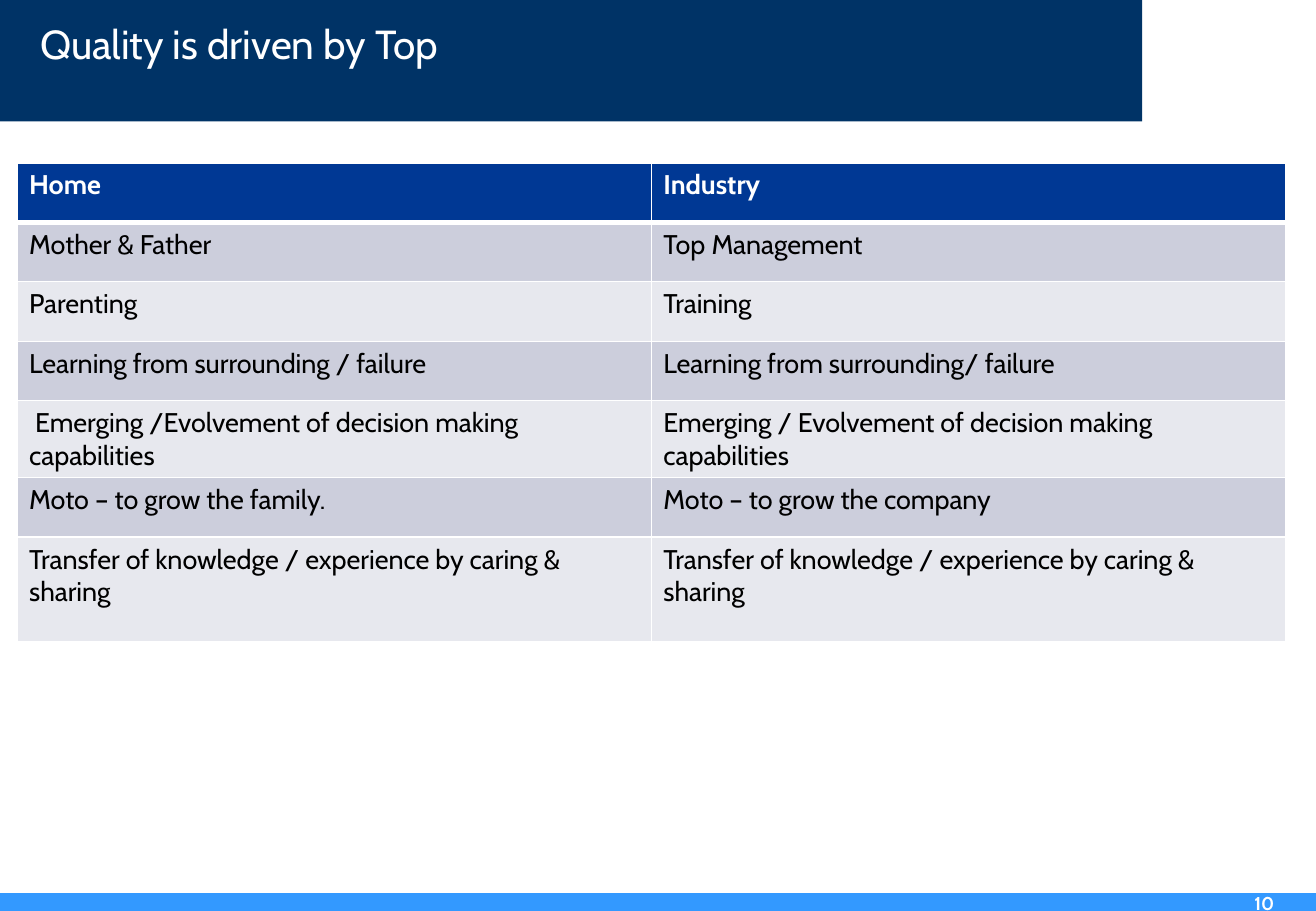
from lxml import etree
from pptx import Presentation
from pptx.dml.color import RGBColor
from pptx.enum.shapes import MSO_SHAPE
from pptx.enum.text import MSO_ANCHOR, PP_ALIGN
from pptx.oxml.ns import qn
from pptx.util import Inches, Pt

RECTANGLE = MSO_SHAPE.RECTANGLE
MIDDLE = MSO_ANCHOR.MIDDLE
LEFT, CENTER = PP_ALIGN.LEFT, PP_ALIGN.CENTER

FONT = "Cabin"
WHITE = RGBColor(0xFF, 0xFF, 0xFF)
BLACK = RGBColor(0x00, 0x00, 0x00)
NAVY = RGBColor(0x00, 0x33, 0x66)
SKY = RGBColor(0x33, 0x99, 0xFF)
HEADER_BLUE = RGBColor(0x00, 0x38, 0x94)
BAND_DARK = RGBColor(0xCC, 0xCE, 0xDC)
BAND_LIGHT = RGBColor(0xE7, 0xE8, 0xEE)

# The slide is a grid of square units, ten to the inch
UNIT = Inches(0.1)
COLUMNS, ROWS = 108.3, 75

ROW_HEIGHTS = [4.9, 4.9, 4.9, 4.9, 5.6, 4.9, 8.6]
COMPARISON = [
    ("Home", "Industry"),
    ("Mother & Father", "Top Management"),
    ("Parenting", "Training"),
    ("Learning from surrounding / failure", "Learning from surrounding/ failure"),
    (" Emerging /Evolvement of decision making capabilities",
     "Emerging / Evolvement of decision making capabilities"),
    ("Moto – to grow the family.", "Moto – to grow the company"),
    ("Transfer of knowledge / experience by caring & sharing",
     "Transfer of knowledge / experience by caring & sharing"),
]


def units(*counts):
    return [int(count * UNIT) for count in counts]


def style_paragraph(para, size, color, bold=False, align=LEFT):
    para.alignment = align
    para.font.name = FONT
    para.font.size = Pt(size)
    para.font.bold = bold
    para.font.color.rgb = color


def set_insets(frame, side, end):
    frame.margin_left = frame.margin_right = side
    frame.margin_top = frame.margin_bottom = end


def add_bar(page, box, color):
    bar = page.shapes.add_shape(RECTANGLE, *units(*box))
    bar.shadow.inherit = False
    bar.fill.solid()
    bar.fill.fore_color.rgb = color
    bar.line.fill.background()
    return bar


def add_header(page, box, text):
    left, top, width, height = box
    bar = add_bar(page, box, NAVY)
    title = page.shapes.title
    bar.element.addnext(title.element)  # title in front of its bar
    title.left, title.top, title.width, title.height = units(
        left + 3.3, top + 1.3, width - 3, height / 2)
    frame = title.text_frame
    frame.text = text
    frame.word_wrap = True
    frame.vertical_anchor = MIDDLE
    set_insets(frame, 0, Inches(0.05))
    para = frame.paragraphs[0]
    para.line_spacing = 0.9
    style_paragraph(para, 24, WHITE)


def add_footer(page, box, number):
    left, top, width, height = box
    bar = add_bar(page, box, SKY)
    bar.line.color.rgb = SKY
    bar.line.width = Pt(0.75)
    label = page.shapes.add_textbox(*units(left + width - 6.4, top - 0.2, 4.3, 1.8))
    frame = label.text_frame
    frame.word_wrap = True
    set_insets(frame, 0, 0)
    frame.text = number
    style_paragraph(frame.paragraphs[0], 11, WHITE, True, CENTER)


def set_borders(cell, widths):
    properties = cell._tc.get_or_add_tcPr()
    for side, width in widths.items():
        line = etree.SubElement(properties, qn(f"a:ln{side}"), w=str(Pt(width)))
        fill = etree.SubElement(line, qn("a:solidFill"))
        etree.SubElement(fill, qn("a:srgbClr"), val=str(WHITE))


def add_comparison(page, box, rows, heights):
    frame = page.shapes.add_table(len(rows), len(rows[0]), *units(*box))
    table = frame.table
    for column in table.columns:
        column.width = frame.width // len(rows[0])
    for index, (texts, height) in enumerate(zip(rows, heights)):
        table.rows[index].height = units(height)[0]
        is_header = index == 0
        band = BAND_DARK if index % 2 else BAND_LIGHT
        widths = {"L": 1, "R": 1, "T": 3 if index == 1 else 1, "B": 3 if is_header else 1}
        for cell, text in zip(table.rows[index].cells, texts):
            set_borders(cell, widths)
            cell.fill.solid()
            cell.fill.fore_color.rgb = HEADER_BLUE if is_header else band
            cell.text = text
            style_paragraph(cell.text_frame.paragraphs[0], 16,
                            WHITE if is_header else BLACK, is_header)


def main():
    deck = Presentation()
    deck.slide_width, deck.slide_height = units(COLUMNS, ROWS)
    page = deck.slides.add_slide(deck.slide_layouts[5])
    add_header(page, (0, 0, 94, 10), "Quality is driven by Top")
    add_footer(page, (0, ROWS - 1.4, COLUMNS, 1.4), "10")
    add_comparison(page, (1.4, 13.4, 104.4, sum(ROW_HEIGHTS)), COMPARISON, ROW_HEIGHTS)
    deck.save("out.pptx")


if __name__ == "__main__":
    main()
